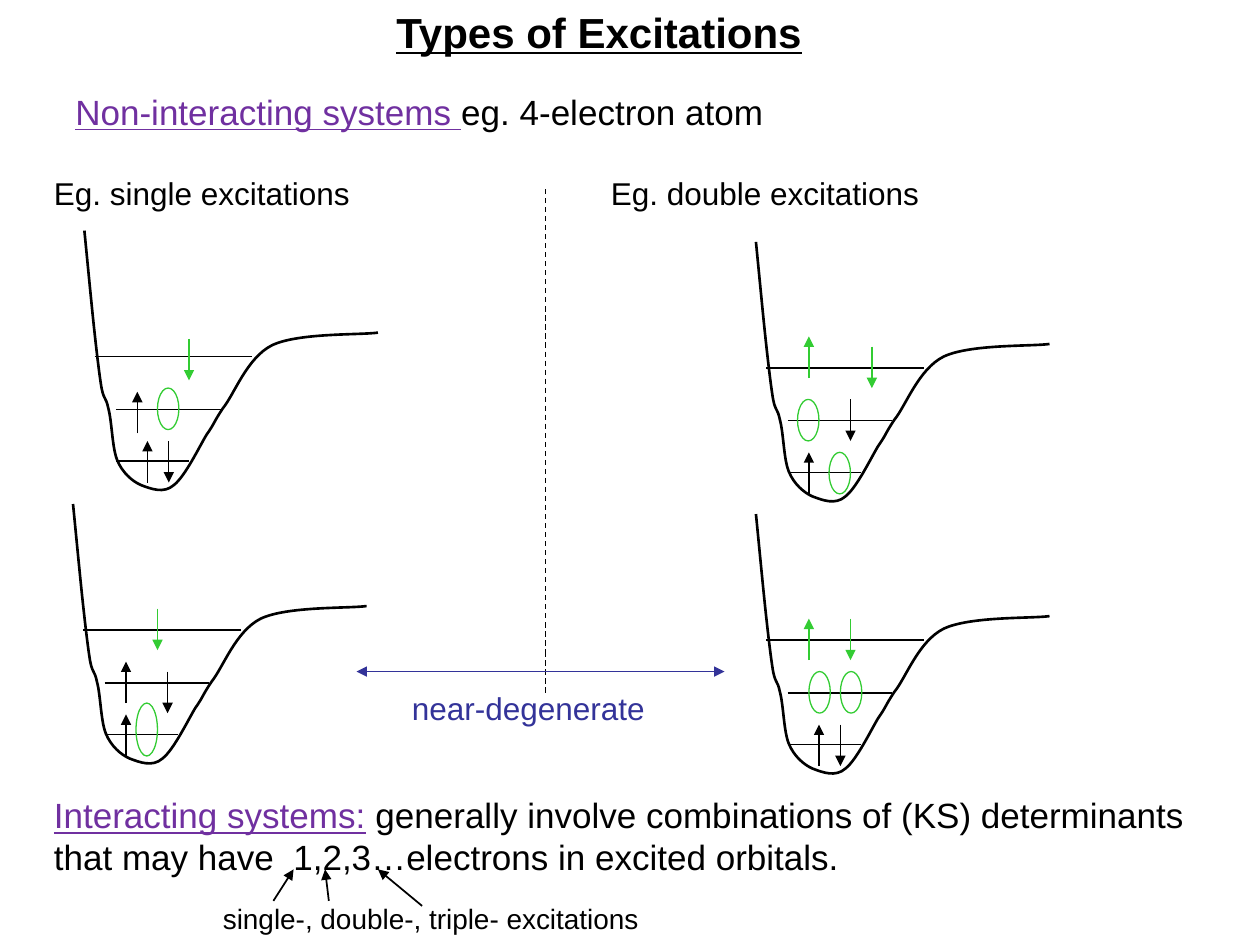
import pptx
import pptx.util
import pptx.dml.color
import pptx.enum.dml
import pptx.enum.shapes
import pptx.enum.text
import pptx.oxml.ns
import pptx.oxml.xmlchemy

Inches, Pt = pptx.util.Inches, pptx.util.Pt
RGB = pptx.dml.color.RGBColor
qn = pptx.oxml.ns.qn
make = pptx.oxml.xmlchemy.OxmlElement

BLACK = RGB(0, 0, 0)
GREEN = RGB(0x33, 0xCC, 0x33)
PURPLE = RGB(0x70, 0x30, 0xA0)
BLUE = RGB(0x33, 0x33, 0x99)

# Text: left, top, width, height, size, centred, runs of (text, colour, bold, underline)
TEXTS = [
    (0.92, 0, 7.67, 0.5, 24, True, [("Types of Excitations", BLACK, True, True)]),
    (0.5, 0.67, 8.67, 0.43, 20, False, [
        ("Non-interacting systems ", PURPLE, False, True),
        ("eg. 4-electron atom", BLACK, False, False)]),
    (0.33, 1.33, 2.83, 0.4, 18, False, [("Eg. single excitations", BLACK, False, False)]),
    (4.75, 1.33, 3.17, 0.4, 18, False, [("Eg. double excitations", BLACK, False, False)]),
    (3.17, 5.42, 2.25, 0.4, 18, False, [("near-degenerate", BLUE, False, False)]),
    (0.33, 6.25, 9.33, 0.77, 20, False, [
        ("Interacting systems:", PURPLE, False, True),
        (" ", PURPLE, False, False),
        ("generally involve combinations of (KS) determinants that may have  "
         "1,2,3…electrons in excited orbitals.", BLACK, False, False)]),
    (1.67, 7.11, 3.91, 0.37, 16, False,
     [("single-, double-, triple- excitations", BLACK, False, False)]),
]

# Potential well, from its top left: Bezier points, and levels (left, right, height)
CURVE = [
    (0, 0),
    (0.02, 0.2), (0.04, 0.41), (0.06, 0.61), (0.08, 0.81), (0.11, 1.08), (0.13, 1.21),
    (0.15, 1.35), (0.17, 1.31), (0.19, 1.41), (0.22, 1.52), (0.22, 1.72), (0.26, 1.82),
    (0.3, 1.92), (0.38, 1.99), (0.45, 2.02), (0.53, 2.05), (0.63, 2.09), (0.71, 2.02),
    (0.8, 1.95), (0.91, 1.72), (0.97, 1.62), (1.04, 1.52), (1.02, 1.53), (1.1, 1.41),
    (1.19, 1.3), (1.29, 1.01), (1.49, 0.91), (1.7, 0.81), (2.19, 0.83), (2.33, 0.81),
]
LEVELS = [(0.25, 0.83, 1.83), (0.08, 1.33, 1), (0.25, 1.08, 1.42)]

# Each well: origin, electrons (x, top, spin, colour), holes (left, top, height)
SPIN = 0.33
WELLS = [
    ((0.67, 1.83),
     [(0.5, 1.67, "up", BLACK), (0.67, 1.67, "down", BLACK),
      (0.42, 1.28, "up", BLACK), (0.83, 0.86, "down", GREEN)],
     [(0.58, 1.25, 0.33)]),
    ((6, 1.92),
     [(0.42, 1.67, "up", BLACK), (0.75, 1.25, "down", BLACK),
      (0.42, 0.75, "up", GREEN), (0.92, 0.83, "down", GREEN)],
     [(0.33, 1.25, 0.33), (0.58, 1.67, 0.33)]),
    ((0.58, 4),
     [(0.42, 1.67, "up", BLACK), (0.42, 1.25, "up", BLACK),
      (0.75, 1.33, "down", BLACK), (0.67, 0.83, "down", GREEN)],
     [(0.5, 1.58, 0.42)]),
    ((6, 4.08),
     [(0.5, 1.67, "up", BLACK), (0.67, 1.67, "down", BLACK),
      (0.42, 0.83, "up", GREEN), (0.75, 0.83, "down", GREEN)],
     [(0.42, 1.25, 0.33), (0.67, 1.25, 0.33)]),
]

# Pointers from the bottom label to the numbers
POINTERS = [(2.17, 7.15, 2.33, 6.9), (2.61, 7.15, 2.58, 6.9), (3.35, 7.19, 3, 6.9)]


def add_text(shapes, left, top, wide, high, size, mid, runs):
    box = shapes.add_textbox(Inches(left), Inches(top), Inches(wide), Inches(high))
    box.text_frame.word_wrap = True
    para = box.text_frame.paragraphs[0]
    if mid:
        para.alignment = pptx.enum.text.PP_ALIGN.CENTER
    for text, tint, bold, under in runs:
        run = para.add_run()
        run.text = text
        font = run.font
        font.name, font.size = "Arial", Pt(size)
        font.bold, font.underline = bold, under
        font.color.rgb = tint


def add_line(shapes, x1, y1, x2, y2, tint=BLACK, width=0.75, ends=(), dash=False):
    line = shapes.add_connector(pptx.enum.shapes.MSO_CONNECTOR.STRAIGHT,
                                Inches(x1), Inches(y1), Inches(x2), Inches(y2))
    line.line.color.rgb = tint
    line.line.width = Pt(width)
    if dash:
        line.line.dash_style = pptx.enum.dml.MSO_LINE.DASH
    props = line._element.spPr
    for end in ends:
        tip = make("a:" + end)
        tip.set("type", "triangle")
        props.find(qn("a:ln")).append(tip)
    props.append(make("a:effectLst"))


def outline(shape, tint, width):
    shape.shadow.inherit = False
    shape.fill.background()
    shape.line.color.rgb = tint
    shape.line.width = Pt(width)


def add_curve(shapes, x, y):
    dots = [(Inches(x + dx), Inches(y + dy)) for dx, dy in CURVE]
    build = shapes.build_freeform(*dots[0])
    build.add_line_segments(dots[1:], close=False)
    shape = build.convert_to_shape()
    outline(shape, BLACK, 1.5)
    # Turn every three straight segments into one Bezier segment
    steps = list(shape._element.iter(qn("a:lnTo")))
    for i in range(0, len(steps), 3):
        bend = make("a:cubicBezTo")
        steps[i].addprevious(bend)
        for step in steps[i:i + 3]:
            bend.append(step[0])
            step.getparent().remove(step)


def add_well(shapes, x, y, spins, holes):
    group = shapes.add_group_shape().shapes
    add_curve(group, x, y)
    for left, right, high in LEVELS:
        add_line(group, x + left, y + high, x + right, y + high)
    for dx, top, spin, tint in spins:
        ends = [y + top, y + top + SPIN]
        if spin == "up":
            ends.reverse()
        add_line(group, x + dx, ends[0], x + dx, ends[1], tint, ends=["tailEnd"])
    for dx, top, high in holes:
        hole = group.add_shape(pptx.enum.shapes.MSO_SHAPE.OVAL, Inches(x + dx),
                               Inches(y + top), Inches(0.17), Inches(high))
        outline(hole, GREEN, 0.75)


def main():
    deck = pptx.Presentation()
    deck.slide_width, deck.slide_height = Inches(10), Inches(7.5)
    shapes = deck.slides.add_slide(deck.slide_layouts[6]).shapes

    for text in TEXTS:
        add_text(shapes, *text)
    for (x, y), spins, holes in WELLS:
        add_well(shapes, x, y, spins, holes)
    for ends in POINTERS:
        add_line(shapes, *ends, width=1, ends=["tailEnd"])

    # Divider in two parts, and the link between the lower wells
    add_line(shapes, 4.33, 1.5, 4.33, 5.17, dash=True)
    add_line(shapes, 4.33, 5.17, 4.33, 5.5, dash=True)
    add_line(shapes, 2.83, 5.33, 5.75, 5.33, BLUE, ends=["headEnd", "tailEnd"])

    deck.save("out.pptx")


if __name__ == "__main__":
    main()
